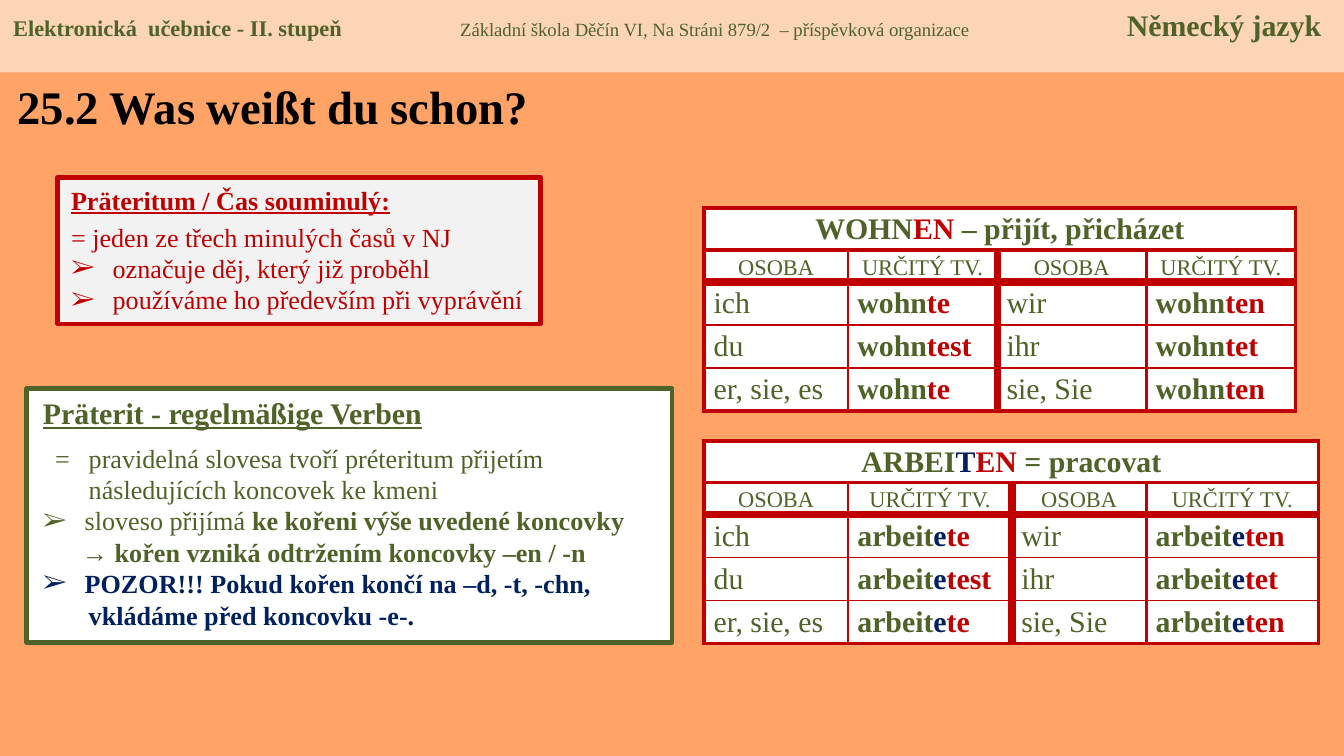
from dataclasses import dataclass
from typing import NamedTuple

import lxml.etree
import pptx
import pptx.dml.color
import pptx.enum.shapes
import pptx.enum.text
import pptx.oxml.ns
import pptx.util

COLORS = {
    "background": "FFA366", "band": "FCD5B5", "green": "4F6228", "red": "C00000",
    "navy": "002060", "black": "000000", "white": "FFFFFF", "gray": "F2F2F2",
}
FONT = "Times New Roman"
SLIDE_WIDTH = pptx.util.Inches(10)
SLIDE_HEIGHT = SLIDE_WIDTH * 9 // 16
# The slide is a grid of square units, 100 columns by 56.25 rows.
COLUMN = SLIDE_WIDTH / 100
ROW = SLIDE_HEIGHT / 56.25

ENDINGS = [("ich", "te", "wir", "ten"), ("du", "test", "ihr", "tet"),
           ("er, sie, es", "te", "sie, Sie", "ten")]
ROW_HEIGHTS = (3.1, 2.4, 3.2, 3.2, 3.2)
COLUMN_EDGES = (2.25, 1.5, 4.5, 1.5, 2.25)
ROW_EDGES = (2.25, 2.25, 4.5, 1, 1, 2.25)


class Box(NamedTuple):
    left: float
    top: float
    width: float
    height: float


class Run(NamedTuple):
    text: str
    color: str = "green"
    bold: bool = False
    size: float | None = None
    spacing: float = 0


@dataclass
class Line:
    runs: list[Run]
    size: float = 14
    underline: bool = False
    space_after: float = 0
    bullet: str = ""
    margin: float = 0
    indent: float = 0


@dataclass
class VerbTable:
    left: float
    top: float
    widths: tuple[float, ...]
    heading: list[Run]
    stem: str
    link: str


def columns(count: float) -> int:
    return round(count * COLUMN)


def rows(count: float) -> int:
    return round(count * ROW)


def color(name: str) -> pptx.dml.color.RGBColor:
    return pptx.dml.color.RGBColor.from_string(COLORS[name])


def add_element(parent, tag: str, **attributes: str):
    element = lxml.etree.SubElement(parent, pptx.oxml.ns.qn(tag))
    for name, value in attributes.items():
        element.set(name, value)
    return element


def fill_paragraph(paragraph, runs: list[Run], size: float) -> None:
    paragraph.font.name = FONT
    paragraph.font.size = pptx.util.Pt(size)
    for item in runs:
        run = paragraph.add_run()
        run.text = item.text
        run.font.name = FONT
        run.font.size = pptx.util.Pt(item.size or size)
        run.font.bold = item.bold
        run.font.color.rgb = color(item.color)
        if item.spacing:
            run._r.get_or_add_rPr().set("spc", str(round(item.spacing * 100)))


def add_panel(slide, box: Box, fill: str, lines: list[Line], border: str = "",
              inset: float = 1) -> None:
    shape = slide.shapes.add_shape(
        pptx.enum.shapes.MSO_SHAPE.RECTANGLE, columns(box.left), rows(box.top),
        columns(box.width), rows(box.height))
    shape.shadow.inherit = False
    shape.fill.solid()
    shape.fill.fore_color.rgb = color(fill)
    if border:
        shape.line.color.rgb = color(border)
        shape.line.width = pptx.util.Pt(2.5)
    else:
        shape.line.fill.background()
    frame = shape.text_frame
    frame.word_wrap = True
    frame.vertical_anchor = pptx.enum.text.MSO_ANCHOR.TOP
    frame.margin_left = columns(inset)
    frame.margin_right = columns(0.5)
    for index, line in enumerate(lines):
        paragraph = frame.add_paragraph() if index else frame.paragraphs[0]
        paragraph.alignment = pptx.enum.text.PP_ALIGN.LEFT
        paragraph.space_after = pptx.util.Pt(line.space_after)
        fill_paragraph(paragraph, line.runs, line.size)
        for run in paragraph.runs:
            run.font.underline = line.underline
        properties = paragraph._p.get_or_add_pPr()
        properties.set("marL", str(columns(line.margin)))
        properties.set("indent", str(columns(line.indent)))
        if line.bullet:
            defaults = properties.find(pptx.oxml.ns.qn("a:defRPr"))
            defaults.addprevious(add_element(properties, "a:buFont", typeface=FONT))
            defaults.addprevious(add_element(properties, "a:buChar", char=line.bullet))


def style_cell(cell, row: int, column: int) -> None:
    """Border widths follow from the grid edges around the cell."""
    properties = cell._tc.get_or_add_tcPr()
    is_heading = row == 0
    widths = {
        "a:lnL": COLUMN_EDGES[0 if is_heading else column],
        "a:lnR": COLUMN_EDGES[-1 if is_heading else column + 1],
        "a:lnT": ROW_EDGES[row], "a:lnB": ROW_EDGES[row + 1],
    }
    for tag, width in widths.items():
        line = add_element(properties, tag, w=str(pptx.util.Pt(width)))
        add_element(add_element(line, "a:solidFill"), "a:srgbClr", val=COLORS["red"])
    cell.fill.solid()
    cell.fill.fore_color.rgb = color("white")
    cell.margin_left = cell.margin_right = columns(0.7)
    cell.margin_top = cell.margin_bottom = 0
    if row == 1:
        cell.vertical_anchor = pptx.enum.text.MSO_ANCHOR.MIDDLE


def add_verb_table(slide, verb: VerbTable) -> None:
    def form(ending: str) -> list[Run]:
        link = [Run(verb.link, "navy", True)] if verb.link else []
        return [Run(verb.stem, bold=True), *link, Run(ending, "red", True)]

    contents = [[verb.heading], [[Run("OSOBA")], [Run("URČITÝ TV.")]] * 2]
    for singular, first, plural, second in ENDINGS:
        contents.append([[Run(singular)], form(first), [Run(plural)], form(second)])

    table = slide.shapes.add_table(
        len(ROW_HEIGHTS), len(verb.widths), columns(verb.left), rows(verb.top),
        columns(sum(verb.widths)), rows(sum(ROW_HEIGHTS))).table
    table.first_row = table.horz_banding = False
    for table_column, width in zip(table.columns, verb.widths):
        table_column.width = columns(width)
    for table_row, height in zip(table.rows, ROW_HEIGHTS):
        table_row.height = rows(height)
    table.cell(0, 0).merge(table.cell(0, len(verb.widths) - 1))
    for row in range(len(ROW_HEIGHTS)):
        for column in range(len(verb.widths)):
            cell = table.cell(row, column)
            style_cell(cell, row, column)
            if column < len(contents[row]):
                paragraph = cell.text_frame.paragraphs[0]
                paragraph.line_spacing = 1.15
                if row < 2:
                    paragraph.alignment = pptx.enum.text.PP_ALIGN.CENTER
                fill_paragraph(paragraph, contents[row][column], 12 if row == 1 else 16)


def add_title(slide, text: str, box: Box) -> None:
    title = slide.shapes.title
    title.left, title.top = columns(box.left), rows(box.top)
    title.width, title.height = columns(box.width), rows(box.height)
    frame = title.text_frame
    frame.auto_size = pptx.enum.text.MSO_AUTO_SIZE.NONE
    frame.word_wrap = True
    frame.margin_right = 0
    frame.vertical_anchor = pptx.enum.text.MSO_ANCHOR.MIDDLE
    frame.paragraphs[0].alignment = pptx.enum.text.PP_ALIGN.LEFT
    fill_paragraph(frame.paragraphs[0], [Run(text, "black", True)], 25)


def bullet_line(*runs: Run) -> Line:
    return Line(list(runs), bullet="➢", margin=3.1, indent=-3.1)


def main() -> None:
    presentation = pptx.Presentation()
    presentation.slide_width, presentation.slide_height = SLIDE_WIDTH, SLIDE_HEIGHT
    slide = presentation.slides.add_slide(presentation.slide_layouts[5])
    slide.background.fill.solid()
    slide.background.fill.fore_color.rgb = color("background")

    add_panel(slide, Box(0, 0, 100, 5.4), "band", [Line([
        Run("Elektronická  učebnice - II. stupeň", bold=True, size=12),
        Run(" ", size=12, spacing=60),
        Run("Základní škola Děčín VI, Na Stráni 879/2  – příspěvková organizace", size=10),
        Run(" ", size=10, spacing=82),
        Run("Německý jazyk", bold=True, size=16)])])
    add_title(slide, "25.2 Was weißt du schon?", Box(0.3, 5.3, 40.4, 5.2))

    add_panel(slide, Box(4.3, 13.2, 35.9, 10.9), "gray", [
        Line([Run("Präteritum / Čas souminulý:", "red", True)], underline=True, space_after=3),
        Line([Run("= jeden ze třech minulých časů v NJ", "red")]),
        bullet_line(Run("označuje děj, který již proběhl", "red")),
        bullet_line(Run("používáme ho především při vyprávění", "red")),
    ], border="red")
    add_panel(slide, Box(2, 28.9, 48, 18.9), "white", [
        Line([Run("Präterit - regelmäßige Verben", bold=True)], size=16, underline=True,
             space_after=6),
        Line([Run("=\tpravidelná slovesa tvoří préteritum přijetím")], margin=3.4, indent=-2.5),
        Line([Run("následujících koncovek ke kmeni")], margin=3.4),
        bullet_line(Run("sloveso přijímá "), Run("ke kořeni výše uvedené koncovky", bold=True)),
        Line([Run("→ "), Run("kořen vzniká odtržením koncovky –en / -n", bold=True)], margin=2.9),
        bullet_line(Run("POZOR!!! Pokud kořen končí na –d, -t, -chn,", "navy", True)),
        Line([Run("vkládáme před koncovku -e-.", "navy", True)], margin=3.4),
    ], border="green", inset=1.2)

    add_verb_table(slide, VerbTable(
        52.4, 15.5, (10.7, 11.1, 11.1, 11.1),
        [Run("WOHN", bold=True), Run("EN", "red", True), Run(" – přijít, přicházet", bold=True)],
        "wohn", ""))
    add_verb_table(slide, VerbTable(
        52.4, 32.8, (10.7, 12.2, 10, 12.8),
        [Run("ARBEI", bold=True), Run("T", "navy", True), Run("EN", "red", True),
         Run(" = pracovat", bold=True)],
        "arbeit", "e"))
    presentation.save("out.pptx")


if __name__ == "__main__":
    main()
